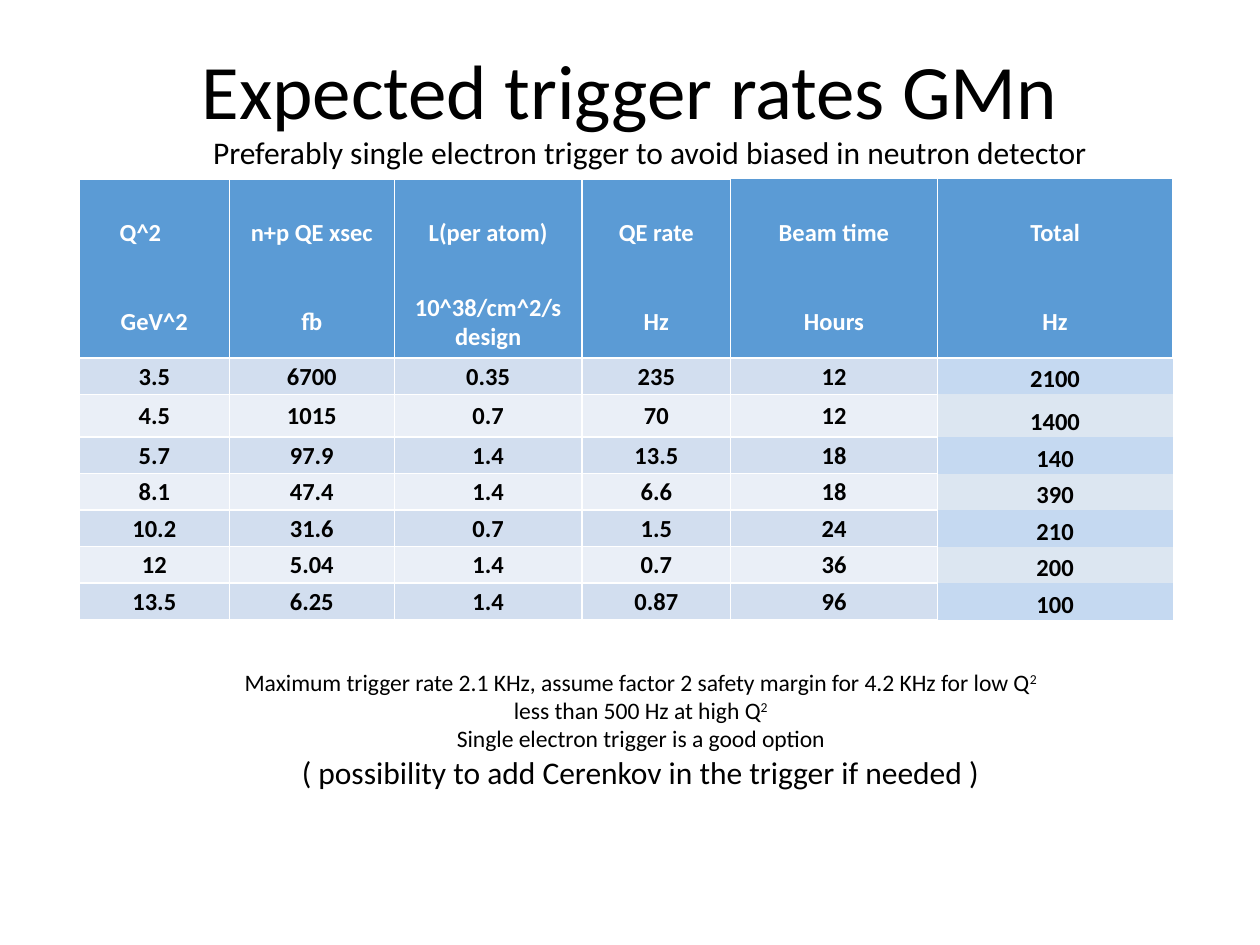
"""Build the slide with the expected GMn trigger rates."""
import pptx
import pptx.dml.color
import pptx.enum.text
import pptx.oxml
import pptx.oxml.ns
import pptx.util
from dataclasses import dataclass


@dataclass(frozen=True)
class Theme:
    font: str = "Calibri"
    text: str = "000000"
    light: str = "FFFFFF"
    header: str = "5B9BD5"
    bands: tuple = ("D2DEEF", "EAEFF7")
    total_bands: tuple = ("C5D9F1", "DCE6F1")
    title_size: float = 44
    large_size: float = 18
    note_size: float = 13.5
    table_size: float = 14
    rule: float = 1
    heavy_rule: float = 1.5


theme = Theme()
Inches = pptx.util.Inches
Anchor = pptx.enum.text.MSO_ANCHOR
rgb = pptx.dml.color.RGBColor.from_string


def format_paragraph(paragraph, size, color=theme.text, bold=False):
    paragraph.alignment = pptx.enum.text.PP_ALIGN.CENTER
    for run in paragraph.runs:
        run.font.name = theme.font
        run.font.size = pptx.util.Pt(size)
        run.font.bold = bold
        run.font.color.rgb = rgb(color)


def draw_border(cell, side, width):
    fill = f'<a:solidFill><a:srgbClr val="{theme.light}"/></a:solidFill>' if width else "<a:noFill/>"
    line = pptx.oxml.parse_xml(
        f'<a:ln{side} {pptx.oxml.ns.nsdecls("a")} w="{pptx.util.Pt(width)}">{fill}</a:ln{side}>'
    )
    cell._tc.get_or_add_tcPr().append(line)


presentation = pptx.Presentation()
presentation.slide_width = Inches(10)
presentation.slide_height = Inches(7.5)
slide = presentation.slides.add_slide(presentation.slide_layouts[6])

title = slide.shapes.add_textbox(Inches(0.5), Inches(0.08), Inches(9), Inches(1.25))
title.text_frame.word_wrap = True
title.text_frame.vertical_anchor = Anchor.MIDDLE
title.text_frame.text = "Expected trigger rates GMn"
format_paragraph(title.text_frame.paragraphs[0], theme.title_size)

rates = [
    ["Q^2", "n+p QE xsec", "L(per atom)", "QE rate", "Beam time", "Total"],
    ["GeV^2", "fb", "10^38/cm^2/s\ndesign", "Hz", "Hours", "Hz"],
    ["3.5", "6700", "0.35", "235", "12", "2100"],
    ["4.5", "1015", "0.7", "70", "12", "1400"],
    ["5.7", "97.9", "1.4", "13.5", "18", "140"],
    ["8.1", "47.4", "1.4", "6.6", "18", "390"],
    ["10.2", "31.6", "0.7", "1.5", "24", "210"],
    ["12", "5.04", "1.4", "0.7", "36", "200"],
    ["13.5", "6.25", "1.4", "0.87", "96", "100"],
]
column_widths = [1.19, 1.31, 1.49, 1.18, 1.64, 1.87]
row_heights = [0.85, 0.57, 0.29, 0.34] + [0.29] * 5
header_rows = 2
total_column = len(column_widths) - 1

table = slide.shapes.add_table(
    len(rates), len(column_widths), Inches(0.63), Inches(1.42),
    Inches(sum(column_widths)), Inches(sum(row_heights)),
).table
for column, width in zip(table.columns, column_widths):
    column.width = Inches(width)
for row, height in zip(table.rows, row_heights):
    row.height = Inches(height)

for row_index, values in enumerate(rates):
    is_header = row_index < header_rows
    for column_index, value in enumerate(values):
        is_total = column_index == total_column and not is_header
        cell = table.cell(row_index, column_index)
        cell.margin_left = cell.margin_right = cell.margin_top = Inches(0.01)
        cell.margin_bottom = 0
        cell.vertical_anchor = Anchor.BOTTOM if is_total else Anchor.MIDDLE
        cell.text_frame.text = value
        for paragraph in cell.text_frame.paragraphs:
            color = theme.light if is_header else theme.text
            format_paragraph(paragraph, theme.table_size, color, bold=True)

        inner = 0 if is_total else theme.rule
        top = {0: theme.rule if column_index < 4 else 0, 1: 0, 2: theme.heavy_rule}
        bottom = {0: 0, 1: theme.heavy_rule}
        draw_border(cell, "L", theme.rule)
        draw_border(cell, "R", inner)
        draw_border(cell, "T", top.get(row_index, inner))
        draw_border(cell, "B", bottom.get(row_index, inner))

        bands = theme.total_bands if is_total else theme.bands
        cell.fill.solid()
        cell.fill.fore_color.rgb = rgb(theme.header if is_header else bands[row_index % 2])
table.cell(0, 0).margin_right = Inches(0.23)

notes = [
    ("Maximum trigger rate 2.1 KHz, assume factor 2 safety margin for 4.2 KHz for low Q", "2", theme.note_size),
    ("less than 500 Hz at high Q", "2", theme.note_size),
    ("Single electron trigger is a good option", "", theme.note_size),
    ("( possibility to add Cerenkov in the trigger if needed )", "", theme.large_size),
]
conclusion = slide.shapes.add_textbox(Inches(1.5), Inches(5.25), Inches(7.17), Inches(1.31))
conclusion.text_frame.word_wrap = True
conclusion.text_frame.auto_size = pptx.enum.text.MSO_AUTO_SIZE.SHAPE_TO_FIT_TEXT
conclusion.text_frame.text = "\n".join(text for text, power, size in notes)
for paragraph, (text, power, size) in zip(conclusion.text_frame.paragraphs, notes):
    if power:
        exponent = paragraph.add_run()
        exponent.text = power
        exponent._r.get_or_add_rPr().set("baseline", "30000")
    format_paragraph(paragraph, size)

subtitle = slide.shapes.add_textbox(Inches(0.85), Inches(1.01), Inches(8.62), Inches(0.4))
subtitle.text_frame.word_wrap = True
subtitle.text_frame.auto_size = pptx.enum.text.MSO_AUTO_SIZE.SHAPE_TO_FIT_TEXT
subtitle.text_frame.text = "Preferably single electron trigger to avoid biased in neutron detector"
format_paragraph(subtitle.text_frame.paragraphs[0], theme.large_size)

presentation.save("out.pptx")
